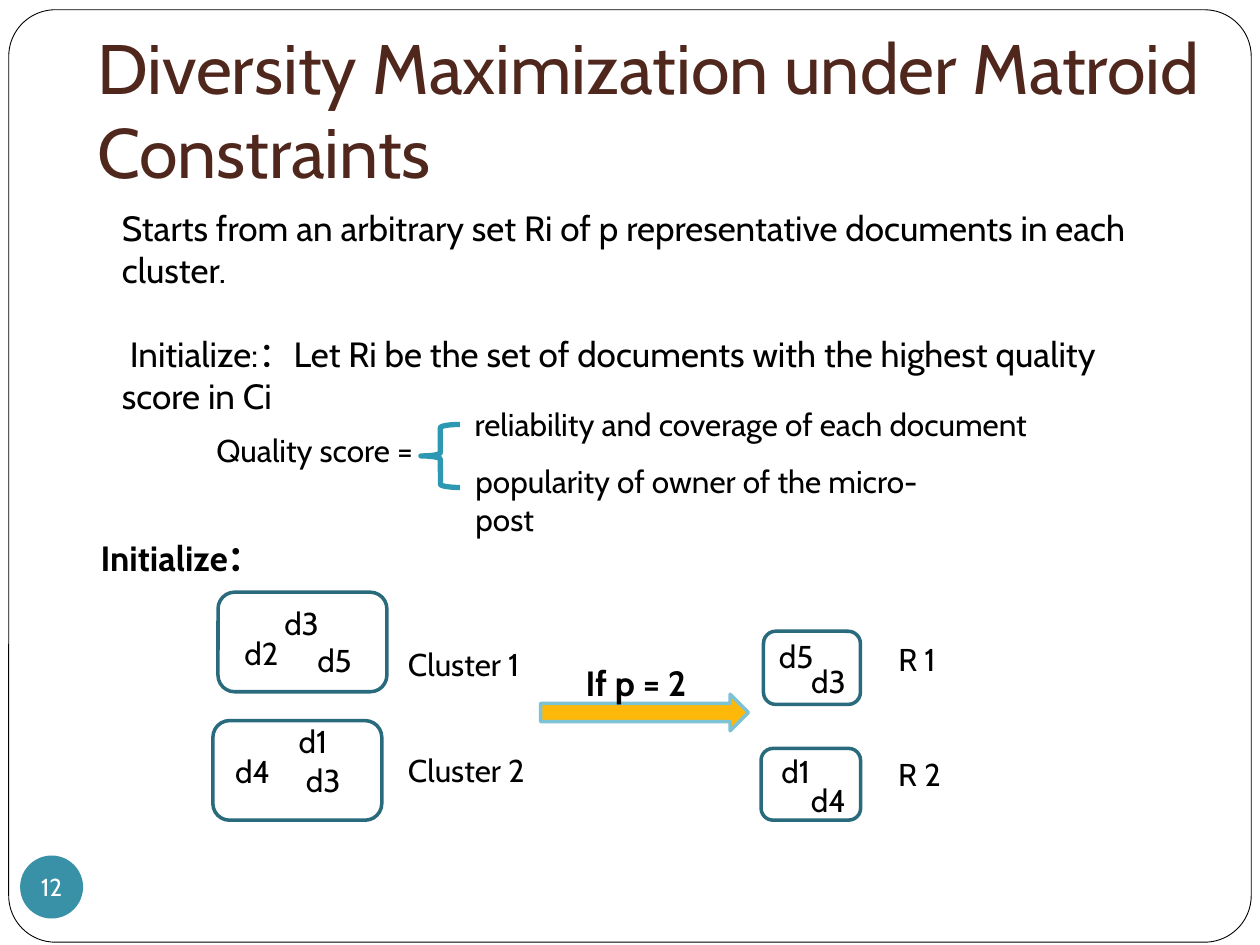
"""Build the slide on diversity maximization under matroid constraints."""
from pptx import Presentation
from pptx.dml.color import RGBColor
from pptx.enum.shapes import MSO_SHAPE as Preset
from pptx.enum.text import MSO_ANCHOR as Anchor, PP_ALIGN as Align
from pptx.util import Pt

BLACK = RGBColor(0x00, 0x00, 0x00)
WHITE = RGBColor(0xFF, 0xFF, 0xFF)
BROWN = RGBColor(0x4F, 0x27, 0x1C)
TEAL = RGBColor(0x38, 0x91, 0xA7)
DARK_TEAL = RGBColor(0x29, 0x6B, 0x7C)
BRACE_TEAL = RGBColor(0x2D, 0x98, 0xB2)
PALE_TEAL = RGBColor(0x7E, 0xC3, 0xD4)
AMBER = RGBColor(0xFE, 0xB8, 0x0A)

prs = Presentation()
prs.slide_width, prs.slide_height = Pt(720), Pt(540)
slide = prs.slides.add_slide(prs.slide_layouts[6])


def draw(preset, box, fill=None, line=None, weight=2):
    shape = slide.shapes.add_shape(preset, *map(Pt, box))
    shape.shadow.inherit = False
    if fill is None:
        shape.fill.background()
    else:
        shape.fill.solid()
        shape.fill.fore_color.rgb = fill
    if line is None:
        shape.line.fill.background()
    else:
        shape.line.color.rgb = line
        shape.line.width = Pt(weight)
    return shape


def write(frame, lines, size=18, color=BLACK, bold=False, align=Align.LEFT, gap=0):
    frame.word_wrap = True
    for index, words in enumerate(lines):
        paragraph = frame.add_paragraph() if index else frame.paragraphs[0]
        paragraph.alignment = align
        paragraph.space_before = Pt(gap if index else 0)
        run = paragraph.add_run()
        run.text = words
        run.font.name = "Cabin"
        run.font.size = Pt(size)
        run.font.bold = bold
        run.font.color.rgb = color


frame_outline = draw(Preset.ROUNDED_RECTANGLE, (5, 5.6, 710, 532.8), WHITE, BLACK, 0.5)
frame_outline.adjustments[0] = 0.05

title = slide.shapes.add_textbox(Pt(48.4), Pt(9.4), Pt(657.4), Pt(108)).text_frame
title.vertical_anchor = Anchor.BOTTOM
title.margin_bottom = Pt(7.2)
write(title, ["Diversity Maximization under Matroid Constraints"], 40, BROWN)

steps = slide.shapes.add_textbox(Pt(62.6), Pt(114.5), Pt(617.8), Pt(128)).text_frame
write(steps, [
    "Starts from an arbitrary set Ri of p representative documents in each cluster.",
    " Initialize:：Let Ri be the set of documents with the highest quality score in Ci",
], 20, gap=24)

draw(Preset.LEFT_BRACE, (240.5, 242.6, 22.3, 36), line=BRACE_TEAL, weight=3)
draw(Preset.RIGHT_ARROW, (308.9, 396.7, 118.8, 20.9), AMBER, PALE_TEAL)

labels = [
    ("Quality score =", 116.6, 242.6, 133.9, 18, False),
    ("reliability and coverage of each document", 264.2, 228, 362.9, 18, False),
    ("popularity of owner of the micro-post", 264.6, 260.6, 297, 18, False),
    ("Initialize：", 50.4, 303.1, 112.3, 20, True),
    ("If p = 2", 327.6, 374.4, 80, 20, True),
    ("Cluster 1", 226, 365, 102.2, 18, False),
    ("Cluster 2", 226, 425.5, 102.2, 18, False),
    ("R 1", 506.2, 362.2, 56.2, 18, False),
    ("R 2", 506.2, 428, 64, 18, False),
]
for words, left, top, width, size, bold in labels:
    label = slide.shapes.add_textbox(Pt(left), Pt(top), Pt(width), Pt(size * 1.6))
    write(label.text_frame, [words], size, bold=bold)

set_outlines = [
    (124.6, 338.4, 96.5, 56.9),
    (121.7, 411.8, 96.5, 56.9),
    (436.3, 360.7, 55.4, 41.8),
    (434.9, 427.7, 56.9, 41),
]
for box in set_outlines:
    draw(Preset.ROUNDED_RECTANGLE, box, line=DARK_TEAL)

documents = [
    ("d2", 149.4, 373), ("d3", 172.4, 355.7), ("d5", 191.2, 377.3),
    ("d4", 144.4, 440.6), ("d1", 178.9, 423.4), ("d3", 184.7, 445.7),
    ("d5", 455, 374.8), ("d3", 473.4, 388.8),
    ("d1", 454.7, 440.6), ("d4", 473.4, 457.2),
]
DOC_WIDTH, DOC_HEIGHT = 56.9, 34.6
for name, center_x, center_y in documents:
    document = draw(Preset.OVAL, (center_x - DOC_WIDTH / 2, center_y - DOC_HEIGHT / 2,
                                  DOC_WIDTH, DOC_HEIGHT))
    document.text_frame.vertical_anchor = Anchor.MIDDLE
    write(document.text_frame, [name], align=Align.CENTER)

page_number = draw(Preset.OVAL, (11.5, 488.9, 36, 36), TEAL).text_frame
page_number.margin_left = page_number.margin_right = 0
page_number.margin_top = page_number.margin_bottom = 0
page_number.vertical_anchor = Anchor.MIDDLE
write(page_number, ["12"], 14, WHITE, align=Align.CENTER)
page_number.word_wrap = False

prs.save("out.pptx")
